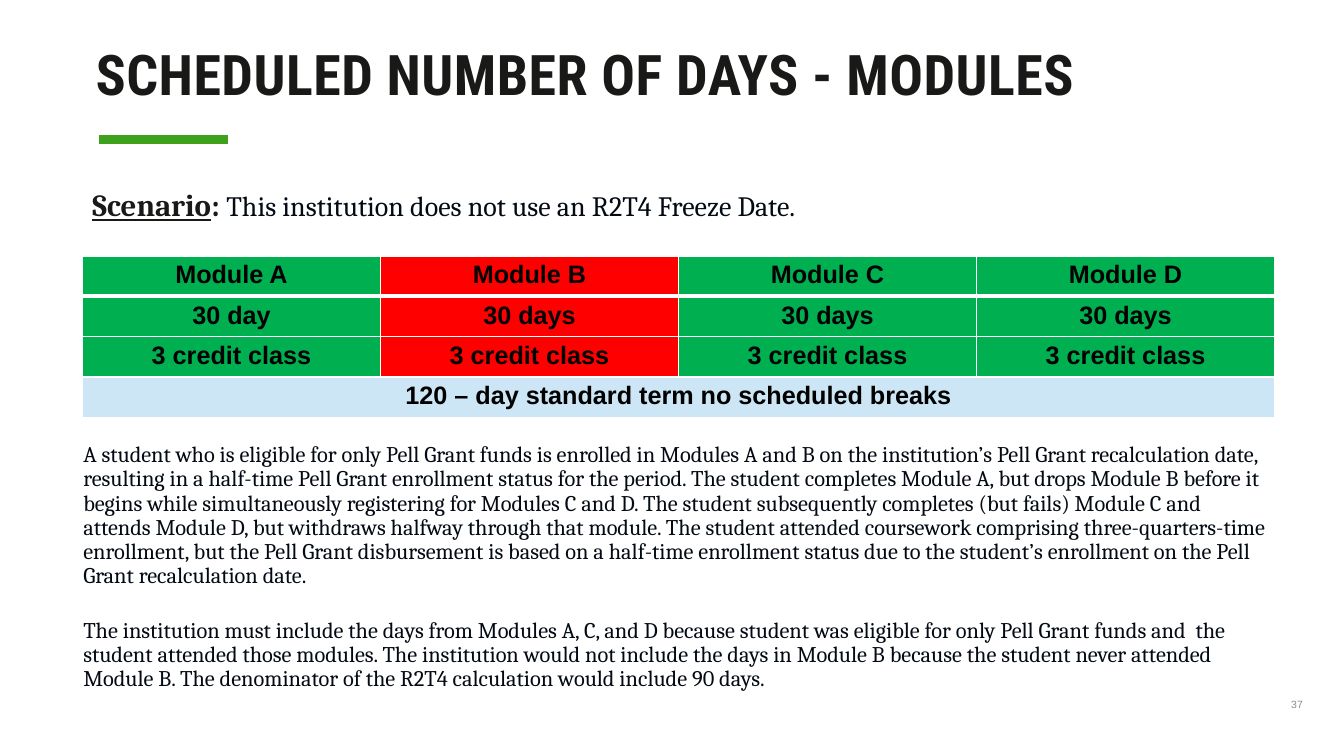
import pptx
import pptx.dml.color
import pptx.enum.shapes
import pptx.enum.text
import pptx.oxml
import pptx.oxml.ns
import pptx.util

Cm = pptx.util.Cm
Pt = pptx.util.Pt
RGBColor = pptx.dml.color.RGBColor
ALIGN = pptx.enum.text.PP_ALIGN

INK = RGBColor(0x19, 0x19, 0x18)
NAVY = RGBColor(0x03, 0x0A, 0x13)
BLACK = RGBColor(0x00, 0x00, 0x00)
GREY = RGBColor(0x8C, 0x8C, 0x8C)
ACCENT = RGBColor(0x3E, 0xA1, 0x1B)
GREEN = RGBColor(0x00, 0xB0, 0x50)
RED = RGBColor(0xFF, 0x00, 0x00)
PALE_BLUE = RGBColor(0xCC, 0xE6, 0xF5)


def write(paragraph, text, size, color, font="Cambria", bold=False, underline=False,
          align=ALIGN.LEFT, line_spacing=None):
    """Append a formatted run to the paragraph."""
    paragraph.alignment = align
    if line_spacing:
        paragraph.line_spacing = line_spacing
    run = paragraph.add_run()
    run.text = text
    run.font.name = font
    run.font.size = Pt(size)
    run.font.bold = bold
    run.font.underline = underline
    run.font.color.rgb = color
    return run


def set_white_borders(cell, bottom):
    """Draw 1 pt borders, with the bottom one in the given width in points."""
    for side, width in (("L", 1), ("R", 1), ("T", 1), ("B", bottom)):
        cell._tc.get_or_add_tcPr().append(pptx.oxml.parse_xml(
            f'<a:ln{side} {pptx.oxml.ns.nsdecls("a")} w="{Pt(width)}">'
            f'<a:solidFill><a:srgbClr val="FFFFFF"/></a:solidFill></a:ln{side}>'))


prs = pptx.Presentation()
prs.slide_width = Cm(33.87)
prs.slide_height = Cm(19.05)
slide = prs.slides.add_slide(prs.slide_layouts[5])
shapes = slide.shapes

# Title and accent rule
title = shapes.title
title.left, title.top, title.width, title.height = Cm(2.08), Cm(1.02), Cm(26.24), Cm(2.2)
title_frame = title.text_frame
title_frame.margin_left = title_frame.margin_right = Cm(0.33)
title_frame.margin_top = title_frame.margin_bottom = Cm(0.18)
title_frame.vertical_anchor = pptx.enum.text.MSO_ANCHOR.TOP
title_frame.auto_size = pptx.enum.text.MSO_AUTO_SIZE.NONE
heading = write(title_frame.paragraphs[0], "SCHEDULED NUMBER OF DAYS - MODULES", 40, INK,
                font="Roboto Condensed", bold=True, line_spacing=0.9)
heading.font._element.set("spc", "40")

rule = shapes.add_connector(pptx.enum.shapes.MSO_CONNECTOR.STRAIGHT,
                            Cm(2.5), Cm(3.51), Cm(5.75), Cm(3.51))
rule.line.color.rgb = ACCENT
rule.line.width = Pt(6.25)
rule._element.spPr.append(pptx.oxml.parse_xml(f'<a:effectLst {pptx.oxml.ns.nsdecls("a")}/>'))

# Scenario
scenario = shapes.add_textbox(Cm(2.08), Cm(4.67), Cm(28.85), Cm(1.4)).text_frame
scenario.word_wrap = True
sentence = scenario.paragraphs[0]
write(sentence, "Scenario", 22, INK, bold=True, underline=True, line_spacing=0.9)
write(sentence, ": ", 22, INK, bold=True)
write(sentence, "This institution does not use an R2T4 Freeze Date.", 20, NAVY)

# Modules of the term
module_rows = [
    ["Module A", "Module B", "Module C", "Module D"],
    ["30 day", "30 days", "30 days", "30 days"],
    ["3 credit class"] * 4,
    ["120 – day standard term no scheduled breaks"],
]
module_fills = [GREEN, RED, GREEN, GREEN]
modules = shapes.add_table(4, 4, Cm(2.08), Cm(6.45), Cm(30.04), Cm(3.56)).table
modules.cell(3, 0).merge(modules.cell(3, 3))
for r, labels in enumerate(module_rows):
    for c, label in enumerate(labels):
        cell = modules.cell(r, c)
        set_white_borders(cell, bottom=3 if r == 0 else 1)
        cell.fill.solid()
        cell.fill.fore_color.rgb = PALE_BLUE if r == 3 else module_fills[c]
        write(cell.text_frame.paragraphs[0], label, 18, BLACK, font="Arial", bold=True,
              align=ALIGN.CENTER)

# Explanation
explanation_texts = [
    "A student who is eligible for only Pell Grant funds is enrolled in Modules A and B on the "
    "institution’s Pell Grant recalculation date, resulting in a half-time Pell Grant enrollment "
    "status for the period. The student completes Module A, but drops Module B before it begins "
    "while simultaneously registering for Modules C and D. The student subsequently completes "
    "(but fails) Module C and attends Module D, but withdraws halfway through that module. "
    "The student attended coursework comprising three-quarters-time enrollment, but the Pell "
    "Grant disbursement is based on a half-time enrollment status due to the student’s "
    "enrollment on the Pell Grant recalculation date.",
    "The institution must include the days from Modules A, C, and D because student was eligible "
    "for only Pell Grant funds and  the student attended those modules. The institution would "
    "not include the days in Module B because the student never attended Module B. The "
    "denominator of the R2T4 calculation would include 90 days.",
]
explanation = shapes.add_textbox(Cm(1.85), Cm(11.05), Cm(30.48), Cm(6.99)).text_frame
explanation.word_wrap = True
for i, text in enumerate(explanation_texts):
    paragraph = explanation.add_paragraph() if i else explanation.paragraphs[0]
    paragraph.space_before = Pt(10 if i else 0)
    paragraph.space_after = Pt(12)
    write(paragraph, text, 16, NAVY, line_spacing=0.9)

# Slide number
number = shapes.add_textbox(Cm(32.54), Cm(17.58), Cm(1.07), Cm(1.04)).text_frame
number.word_wrap = True
number.margin_left = number.margin_top = 0
write(number.paragraphs[0], "37", 7.5, GREY, font="Arial")

prs.save("out.pptx")
